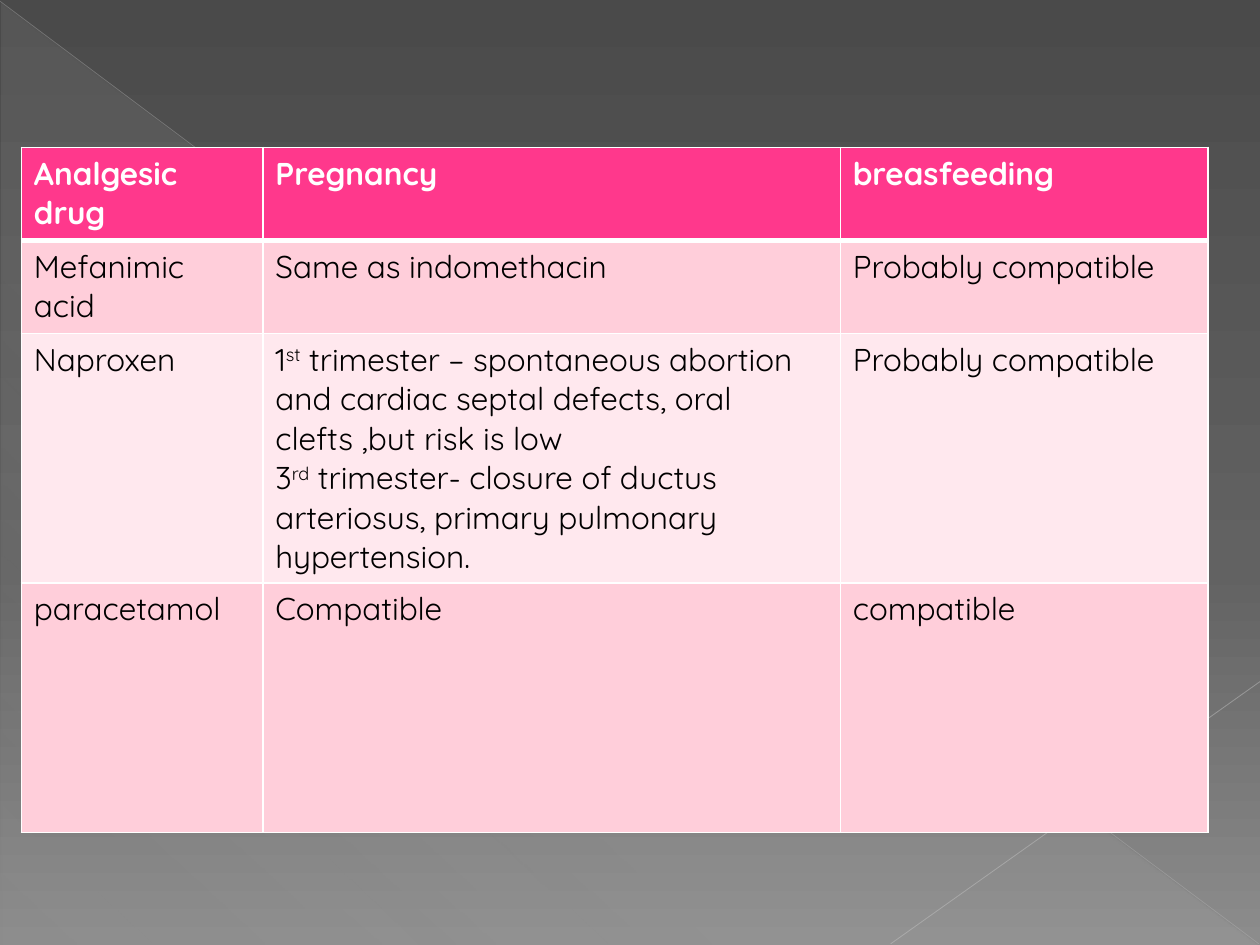
from lxml import etree
from pptx import Presentation
from pptx import util as u
from pptx.dml.color import RGBColor
from pptx.enum import shapes
from pptx.oxml import ns

COLORS = {
    "white": "FFFFFF", "text": "000000", "header": "FF388C",
    "band": "FFCEDA", "light": "FFE8EE",
    "dark": "4A4A4A", "mid": "626262", "pale": "8C8C8C",
    "triangle": "D2D2D2", "falling": "BFBFBF", "rising": "C6C6C6",
}
FONT = "Quicksand"
SUPER = "^"
ROWS = [
    ["Analgesic drug", "Pregnancy", "breasfeeding"],
    ["Mefanimic acid", "Same as indomethacin", "Probably compatible"],
    ["Naproxen",
     "1^st^ trimester – spontaneous abortion and cardiac septal defects, "
     "oral clefts ,but risk is low\n"
     "3^rd^ trimester- closure of ductus arteriosus, primary pulmonary hypertension.",
     "Probably compatible"],
    ["paracetamol", "Compatible", "compatible"],
]
ROW_FILLS = ["header", "band", "light", "band"]
ROW_HEIGHTS = [53.2, 53.2, 142.5, 142.5]
COL_WIDTHS = [138, 330, 210]
TABLE_LEFT, TABLE_TOP = 12.2, 84.2
BACKGROUND = [(0, "dark", 100), (60, "mid", 100), (100, "pale", 100)]
TRIANGLE = [(0, "triangle", 10), (70, "triangle", 8), (100, "triangle", 1)]
LINES = [
    ((0, 0.7), (719.3, 539.3), "falling", 0.39, 35),
    ((720, 389.5), (509, 539.3), "rising", 0.47, 45),
]


def rgb(name):
    return RGBColor.from_string(COLORS[name])


def add(parent, tag, **attrs):
    return etree.SubElement(parent, ns.qn(tag), {k: str(v) for k, v in attrs.items()})


def add_color(parent, name, opacity=100):
    clr = add(parent, "a:srgbClr", val=COLORS[name])
    if opacity < 100:
        add(clr, "a:alpha", val=opacity * 1000)


def set_gradient(props, stops, angle):
    grad = etree.Element(ns.qn("a:gradFill"), rotWithShape="1")
    gs_list = add(grad, "a:gsLst")
    for pos, name, opacity in stops:
        add_color(add(gs_list, "a:gs", pos=pos * 1000), name, opacity)
    add(grad, "a:lin", ang=angle * 60000, scaled=0)
    props.replace(props.find(ns.qn("a:solidFill")), grad)


def add_backdrop(s):
    s.background.fill.solid()
    set_gradient(s.element.xpath(".//p:bgPr")[0], BACKGROUND, 90)
    sp = s.shapes.add_shape(shapes.MSO_SHAPE.RIGHT_TRIANGLE,
                            u.Pt(0.7), u.Pt(1.4), u.Pt(718.6), u.Pt(538.6))
    sp.shadow.inherit = False
    sp.line.fill.background()
    sp.fill.solid()
    set_gradient(sp.element.spPr, TRIANGLE, 133)
    for start, end, name, width, opacity in LINES:
        line = s.shapes.add_connector(shapes.MSO_CONNECTOR.STRAIGHT,
                                      *(u.Pt(v) for v in start + end))
        line.line.width = u.Pt(width)
        line.line.color.rgb = rgb(name)
        sp_pr = line.element.spPr
        add(sp_pr.xpath(".//a:srgbClr")[0], "a:alpha", val=opacity * 1000)
        add(sp_pr, "a:effectLst")


def add_borders(cell, row):
    tc_pr = cell._tc.get_or_add_tcPr()
    widths = {"L": 1, "R": 1, "T": 3 if row == 1 else 1, "B": 3 if row == 0 else 1}
    for side, width in widths.items():
        ln = add(tc_pr, f"a:ln{side}", w=u.Pt(width))
        add_color(add(ln, "a:solidFill"), "white")


def write_cell(cell, content, header):
    tf = cell.text_frame
    tf.text = content.replace(SUPER, "")
    for p, line in zip(tf.paragraphs, content.split("\n")):
        p.clear()
        for i, part in enumerate(line.split(SUPER)):
            r = p.add_run()
            r.text = part
            r.font.name = FONT
            r.font.size = u.Pt(18)
            r.font.bold = header
            r.font.color.rgb = rgb("white" if header else "text")
            if i % 2:
                r.font._element.set("baseline", "30000")


def add_drug_table(s):
    table = s.shapes.add_table(
        len(ROWS), len(COL_WIDTHS), u.Pt(TABLE_LEFT), u.Pt(TABLE_TOP),
        u.Pt(sum(COL_WIDTHS)), u.Pt(sum(ROW_HEIGHTS))).table
    for col, width in zip(table.columns, COL_WIDTHS):
        col.width = u.Pt(width)
    for i, row in enumerate(ROWS):
        table.rows[i].height = u.Pt(ROW_HEIGHTS[i])
        for j, content in enumerate(row):
            cell = table.cell(i, j)
            add_borders(cell, i)
            cell.fill.solid()
            cell.fill.fore_color.rgb = rgb(ROW_FILLS[i])
            write_cell(cell, content, i == 0)


def main():
    prs = Presentation()
    prs.slide_width, prs.slide_height = u.Pt(720), u.Pt(540)
    s = prs.slides.add_slide(prs.slide_layouts[6])
    add_backdrop(s)
    add_drug_table(s)
    prs.save("out.pptx")


if __name__ == "__main__":
    main()
